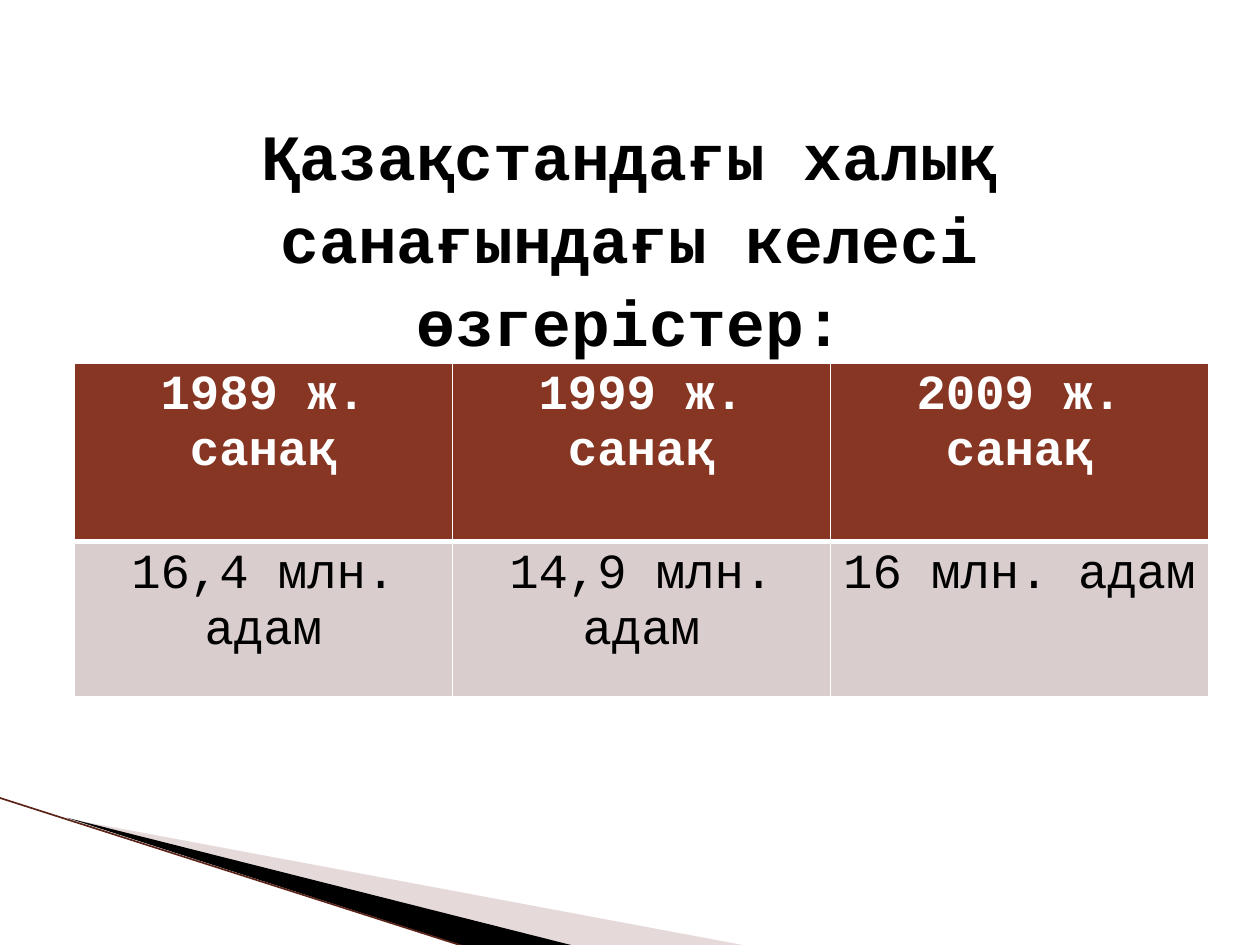
from lxml.etree import SubElement
from pptx import Presentation
from pptx.dml.color import RGBColor
from pptx.enum.text import MSO_ANCHOR, PP_ALIGN
from pptx.oxml.ns import qn
from pptx.util import Inches, Pt

COLORS = {
    "black": "000000",
    "white": "FFFFFF",
    "header": "873624",
    "body": "D9CECD",
    "wedge": "BFA4A1",
    "edge": "5B2418",
}
CENSUS = [
    ["1989 ж. санақ", "1999 ж. санақ", "2009 ж. санақ"],
    ["16,4 млн. адам", "14,9 млн. адам", "16 млн. адам"],
]


class SlideBuilder:
    font_name = "Courier New"

    def __init__(self, page):
        self.page = page

    def color(self, name):
        return RGBColor.from_string(COLORS[name])

    def style(self, text_frame, size, color, bold):
        for paragraph in text_frame.paragraphs:
            paragraph.alignment = PP_ALIGN.CENTER
            for span in paragraph.runs:
                span.font.name = self.font_name
                span.font.size = Pt(size)
                span.font.bold = bold
                span.font.color.rgb = self.color(color)

    def wedge(self, points, color, opacity=100):
        corners = [(Inches(x), Inches(y)) for x, y in points]
        builder = self.page.shapes.build_freeform(*corners[0])
        builder.add_line_segments(corners[1:], close=True)
        shape = builder.convert_to_shape()
        shape.shadow.inherit = False
        shape.line.fill.background()
        shape.fill.solid()
        shape.fill.fore_color.rgb = self.color(color)
        if opacity < 100:
            hue = shape.fill._xPr.find(".//" + qn("a:srgbClr"))
            SubElement(hue, qn("a:alpha"), val=str(opacity * 1000))

    def line(self, start, end, color, width):
        ends = [Inches(value) for value in (*start, *end)]
        connector = self.page.shapes.add_connector(1, *ends)
        connector.line.color.rgb = self.color(color)
        connector.line.width = Pt(width)
        SubElement(connector._element.spPr, qn("a:effectLst"))

    def title(self, text, left, top, width, height, size):
        box = self.page.shapes.add_textbox(
            Inches(left), Inches(top), Inches(width), Inches(height))
        frame = box.text_frame
        frame.word_wrap = True
        frame.vertical_anchor = MSO_ANCHOR.MIDDLE
        frame.text = text
        frame.paragraphs[0].line_spacing = 1.07
        self.style(frame, size, "black", True)

    def borders(self, cell, bottom):
        """Draw white cell borders, 1 pt except for the bottom one."""
        properties = cell._tc.get_or_add_tcPr()
        widths = {"lnL": 1, "lnR": 1, "lnT": 1, "lnB": bottom}
        for index, (side, width) in enumerate(widths.items()):
            border = SubElement(properties, qn("a:" + side), w=str(Pt(width)))
            fill = SubElement(border, qn("a:solidFill"))
            SubElement(fill, qn("a:srgbClr"), val=COLORS["white"])
            properties.insert(index, border)

    def table(self, rows, left, top, column_width, row_heights):
        columns = len(rows[0])
        table = self.page.shapes.add_table(
            len(rows), columns, Inches(left), Inches(top),
            Inches(column_width * columns), Inches(sum(row_heights))).table
        for column in table.columns:
            column.width = Inches(column_width)
        for row_index, values in enumerate(rows):
            is_header = row_index == 0
            table.rows[row_index].height = Inches(row_heights[row_index])
            for column_index, value in enumerate(values):
                cell = table.cell(row_index, column_index)
                cell.margin_left = cell.margin_right = Inches(0.09)
                cell.text_frame.text = value
                self.style(cell.text_frame, 28,
                           "white" if is_header else "black", is_header)
                cell.fill.solid()
                cell.fill.fore_color.rgb = self.color(
                    "header" if is_header else "body")
                # Both sides of the rule below the header share its width.
                self.borders(cell, 3 if is_header else 1)
        for cell in table.rows[1].cells:
            cell._tc.tcPr.find(qn("a:lnT")).set("w", str(Pt(3)))


def main():
    deck = Presentation()
    deck.slide_width, deck.slide_height = Inches(10), Inches(7.5)
    builder = SlideBuilder(deck.slides.add_slide(deck.slide_layouts[6]))
    builder.wedge([(0.55, 6.5), (5.95, 7.51), (4.56, 7.51)], "wedge", 40)
    builder.wedge([(0.53, 6.49), (4.57, 7.51), (3.72, 7.52)], "black")
    builder.line((-0.01, 6.33), (3.71, 7.52), "edge", 0.95)
    builder.table(CENSUS, 0.59, 2.88, 3, [1.42, 1.23])
    builder.title("Қазақстандағы халық санағындағы келесі өзгерістер:",
                  0.5, 0.92, 9, 1.89, 36.9)
    deck.save("out.pptx")


if __name__ == "__main__":
    main()
